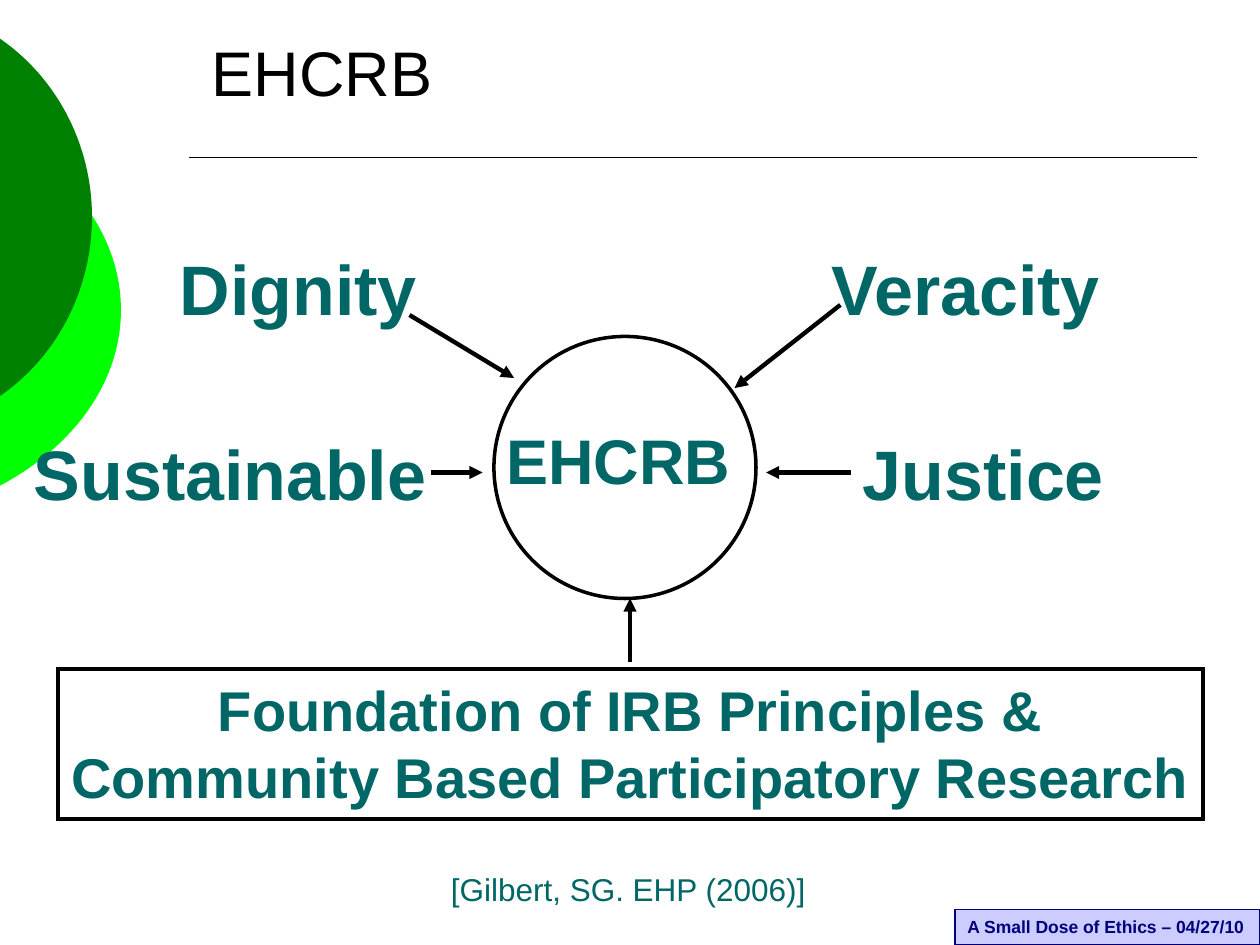
from dataclasses import dataclass

import lxml.etree
import pptx
import pptx.dml.color
import pptx.enum.shapes
import pptx.enum.text
import pptx.oxml.ns
import pptx.util

Inches = pptx.util.Inches
Pt = pptx.util.Pt
Shape = pptx.enum.shapes.MSO_SHAPE
Align = pptx.enum.text.PP_ALIGN
Anchor = pptx.enum.text.MSO_ANCHOR
color = pptx.dml.color.RGBColor.from_string
qn = pptx.oxml.ns.qn
add_element = lxml.etree.SubElement


@dataclass(frozen=True)
class Theme:
    font: str = "Arial"
    ink: str = "000000"
    teal: str = "006666"
    lime: str = "00FF00"
    green: str = "008000"
    navy: str = "00007D"
    lavender: str = "CCCCFF"
    heading: int = 36
    principle: int = 40
    foundation: int = 32
    citation: int = 18
    footer: int = 10


theme = Theme()


def write(shape, lines, size, ink, bold=False, align=Align.LEFT, wrap=False, anchor=Anchor.TOP):
    frame = shape.text_frame
    frame.text = "\n".join(lines)
    frame.auto_size = pptx.enum.text.MSO_AUTO_SIZE.NONE
    frame.word_wrap = wrap
    frame.vertical_anchor = anchor
    for para in frame.paragraphs:
        para.alignment = align
        para.font.name = theme.font
        para.font.size = Pt(size)
        para.font.bold = bold
        para.font.color.rgb = color(ink)


def add_line(start, end, width, arrow=False):
    line = page.shapes.add_connector(
        pptx.enum.shapes.MSO_CONNECTOR.STRAIGHT, *map(Inches, start + end))
    line.line.color.rgb = color(theme.ink)
    line.line.width = Pt(width)
    if arrow:
        add_element(line.line._get_or_add_ln(), qn("a:tailEnd"), type="triangle")
    add_element(line._element.spPr, qn("a:effectLst"))


deck = pptx.Presentation()
deck.slide_width, deck.slide_height = Inches(10), Inches(7.5)
page = deck.slides.add_slide(deck.slide_layouts[5])

# Discs cut by the left edge: frame, then start point and the points of two curves
discs = [
    (theme.lime, (-3.54, 0.75, 4.5, 3.42),
     [(-0.01, 1.06), (0.6, 1.38), (0.96, 1.9), (0.96, 2.46),
      (0.96, 3.02), (0.6, 3.54), (-0.01, 3.86)]),
    (theme.green, (-2.65, 0, 3.38, 3.45),
     [(-0.01, 0.3), (0.46, 0.62), (0.73, 1.16), (0.73, 1.72),
      (0.73, 2.29), (0.46, 2.83), (-0.01, 3.15)]),
]
for fill, place, points in discs:
    left, top, width, height = map(Inches, place)
    outline = [(Inches(x), Inches(y)) for x, y in points]
    builder = page.shapes.build_freeform(*outline[0])
    builder.add_line_segments(outline[1:], close=True)
    disc = builder.convert_to_shape()
    disc.left, disc.top, disc.width, disc.height = left, top, width, height
    curve = disc._element.spPr.find(".//" + qn("a:pathLst"))[0]
    curve.set("w", str(width))
    curve.set("h", str(height))
    for segment in list(curve):
        curve.remove(segment)
    for tag, part in [("a:moveTo", outline[:1]), ("a:cubicBezTo", outline[1:4]),
                      ("a:cubicBezTo", outline[4:])]:
        segment = add_element(curve, qn(tag))
        for x, y in part:
            add_element(segment, qn("a:pt"), x=str(x - left), y=str(y - top))
    add_element(curve, qn("a:close"))
    disc.shadow.inherit = False
    disc.fill.solid()
    disc.fill.fore_color.rgb = color(fill)
    disc.line.fill.background()

add_line((1.5, 1.25), (9.5, 1.25), 1)

title = page.shapes.title
title.left, title.top, title.width, title.height = map(Inches, (1.58, 0.22, 8.25, 0.7))
write(title, ["EHCRB"], theme.heading, theme.ink, wrap=True, anchor=Anchor.BOTTOM)

# Framed shapes
footer = page.shapes.add_shape(Shape.RECTANGLE, *map(Inches, (7.58, 7.22, 2.42, 0.28)))
circle = page.shapes.add_shape(Shape.OVAL, *map(Inches, (3.92, 2.67, 2.08, 2.08)))
foundation = page.shapes.add_shape(Shape.RECTANGLE, *map(Inches, (0.46, 5.31, 9.09, 1.19)))
for shape, edge, width in [(footer, theme.navy, 0.75), (circle, theme.ink, 2),
                           (foundation, theme.ink, 2)]:
    shape.shadow.inherit = False
    shape.fill.background()
    shape.line.color.rgb = color(edge)
    shape.line.width = Pt(width)
    add_element(shape.line._get_or_add_ln(), qn("a:miter"), lim="800000")
footer.fill.solid()
footer.fill.fore_color.rgb = color(theme.lavender)
write(footer, ["A Small Dose of Ethics – 04/27/10"], theme.footer, theme.navy, bold=True, wrap=True)
write(foundation, ["Foundation of IRB Principles &", "Community Based Participatory Research"],
      theme.foundation, theme.teal, bold=True, align=Align.CENTER)

labels = [
    ("[Gilbert, SG. EHP (2006)]", (3.48, 6.86, 3.02, 0.4), theme.citation, False),
    ("EHCRB", (3.92, 3.3, 1.98, 0.7), theme.heading, True),
    ("Dignity", (1.33, 1.9, 2.08, 0.77), theme.principle, True),
    ("Veracity", (6.5, 1.9, 2.36, 0.77), theme.principle, True),
    ("Justice", (6.75, 3.37, 2.12, 0.77), theme.principle, True),
    ("Sustainable", (0.17, 3.37, 3.32, 0.77), theme.principle, True),
]
for words, place, size, bold in labels:
    box = page.shapes.add_textbox(*map(Inches, place))
    write(box, [words], size, theme.teal, bold=bold)

arrows = [
    ((3.25, 2.5), (4.08, 3)),
    ((6.67, 2.42), (5.83, 3.08)),
    ((6.75, 3.75), (6.08, 3.75)),
    ((3.42, 3.75), (3.83, 3.75)),
    ((5, 5.25), (5, 4.75)),
]
for start, end in arrows:
    add_line(start, end, 2.5, arrow=True)

deck.save("out.pptx")
